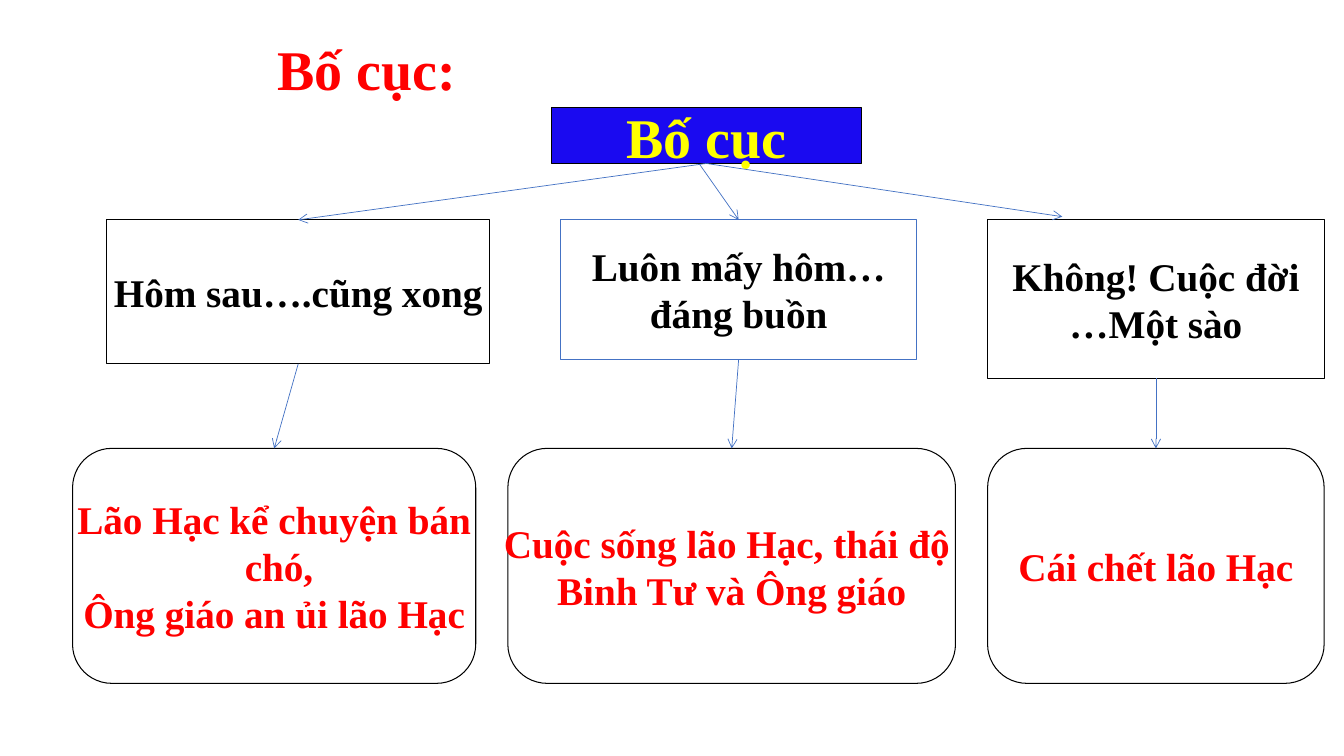
from pptx import Presentation
from pptx import util as u
from pptx.dml.color import RGBColor
from pptx.enum import shapes, text
from pptx.oxml import parse_xml
from pptx.oxml.ns import nsdecls

RED, BLACK, BLUE, WHITE = "FF0000", "000000", "4472C4", "FFFFFF"
RECT = shapes.MSO_SHAPE.RECTANGLE
ROUND = shapes.MSO_SHAPE.FLOWCHART_ALTERNATE_PROCESS


def hue(code):
    return RGBColor.from_string(code)


def write(frame, lines, size, color):
    for i, line in enumerate(lines):
        para = frame.add_paragraph() if i else frame.paragraphs[0]
        para.alignment = text.PP_ALIGN.CENTER
        para.line_spacing = 1.0
        run = para.add_run()
        run.text = line
        font = run.font
        font.name, font.size, font.bold = "Times New Roman", u.Pt(size), True
        font.color.rgb = hue(color)


def place(shape, box):
    shape.left, shape.top, shape.width, shape.height = map(u.Cm, box)


def title(slide, box, line):
    head = slide.shapes.title
    place(head, box)
    frame = head.text_frame
    frame.auto_size = text.MSO_AUTO_SIZE.NONE
    frame.vertical_anchor = text.MSO_ANCHOR.BOTTOM
    write(frame, [line], 40, RED)


def panel(slide, kind, box, lines, size, color, fill=WHITE, edge=BLACK):
    shape = slide.shapes.add_shape(kind, *map(u.Cm, box))
    shape.shadow.inherit = False
    shape.fill.solid()
    shape.fill.fore_color.rgb = hue(fill)
    shape.line.color.rgb = hue(edge)
    shape.line.width = u.Pt(0.75)
    frame = shape.text_frame
    frame.word_wrap = False
    frame.vertical_anchor = text.MSO_ANCHOR.MIDDLE
    write(frame, lines, size, color)
    return shape


def arrow(slide, start, end):
    points = [u.Cm(n) for n in (*start, *end)]
    line = slide.shapes.add_connector(shapes.MSO_CONNECTOR.STRAIGHT, *points)
    line.line.color.rgb = hue(BLUE)
    line.line.width = u.Pt(0.5)
    line.line._get_or_add_ln().append(
        parse_xml(f'<a:tailEnd {nsdecls("a")} type="arrow"/>'))
    line._element.spPr.append(parse_xml(f'<a:effectLst {nsdecls("a")}/>'))
    return line


def column(slide, upper, lower, quote, theme, edge):
    part = panel(slide, RECT, upper, quote, 28, BLACK, edge=edge)
    topic = panel(slide, ROUND, lower, theme, 28, RED)
    link = arrow(slide, (0, 0), (1, 1))
    link.begin_connect(part, 2)
    link.end_connect(topic, 0)
    return part


def outline(slide, root, columns):
    left, top, width, height = root
    mid, base = left + width / 2, top + height
    head = panel(slide, RECT, root, ["Bố cục"], 40, "FFFF00", "1A0AF0")
    first, second, _ = [column(slide, *col) for col in columns]
    link = arrow(slide, (mid, base), (0, 0))
    link.begin_connect(head, 2)
    link.end_connect(first, 0)
    link = arrow(slide, (mid - 0.17, base + 0.02), (0, 0))
    link.end_connect(second, 0)
    link = arrow(slide, (mid, base), (mid + 8.97, base + 1.34))
    link.begin_connect(head, 2)


def main():
    deck = Presentation()
    deck.slide_width, deck.slide_height = u.Cm(33.87), u.Cm(19.05)
    slide = deck.slides.add_slide(deck.slide_layouts[5])
    title(slide, (4.24, 0.74, 9.65, 1.96), " Bố cục:")
    high, low, tall = 5.54, 11.3, 5.92
    columns = [
        ((2.69, high, 9.65, 3.63), (1.83, low, 10.16, tall),
         ["Hôm sau….cũng xong"],
         ["Lão Hạc kể chuyện bán", " chó,", "Ông giáo an ủi lão Hạc"], BLACK),
        ((14.12, high, 8.99, 3.51), (12.8, low, 11.28, tall),
         ["Luôn mấy hôm…", "đáng buồn"],
         ["Cuộc sống lão Hạc, thái độ ", "Binh Tư và Ông giáo"], BLUE),
        ((24.89, high, 8.48, 3.99), (24.89, low, 8.48, tall),
         ["Không! Cuộc đời", "…Một sào"], ["Cái chết lão Hạc"], BLACK),
    ]
    outline(slide, (13.89, 2.72, 7.82, 1.4), columns)
    deck.save("out.pptx")


if __name__ == "__main__":
    main()
